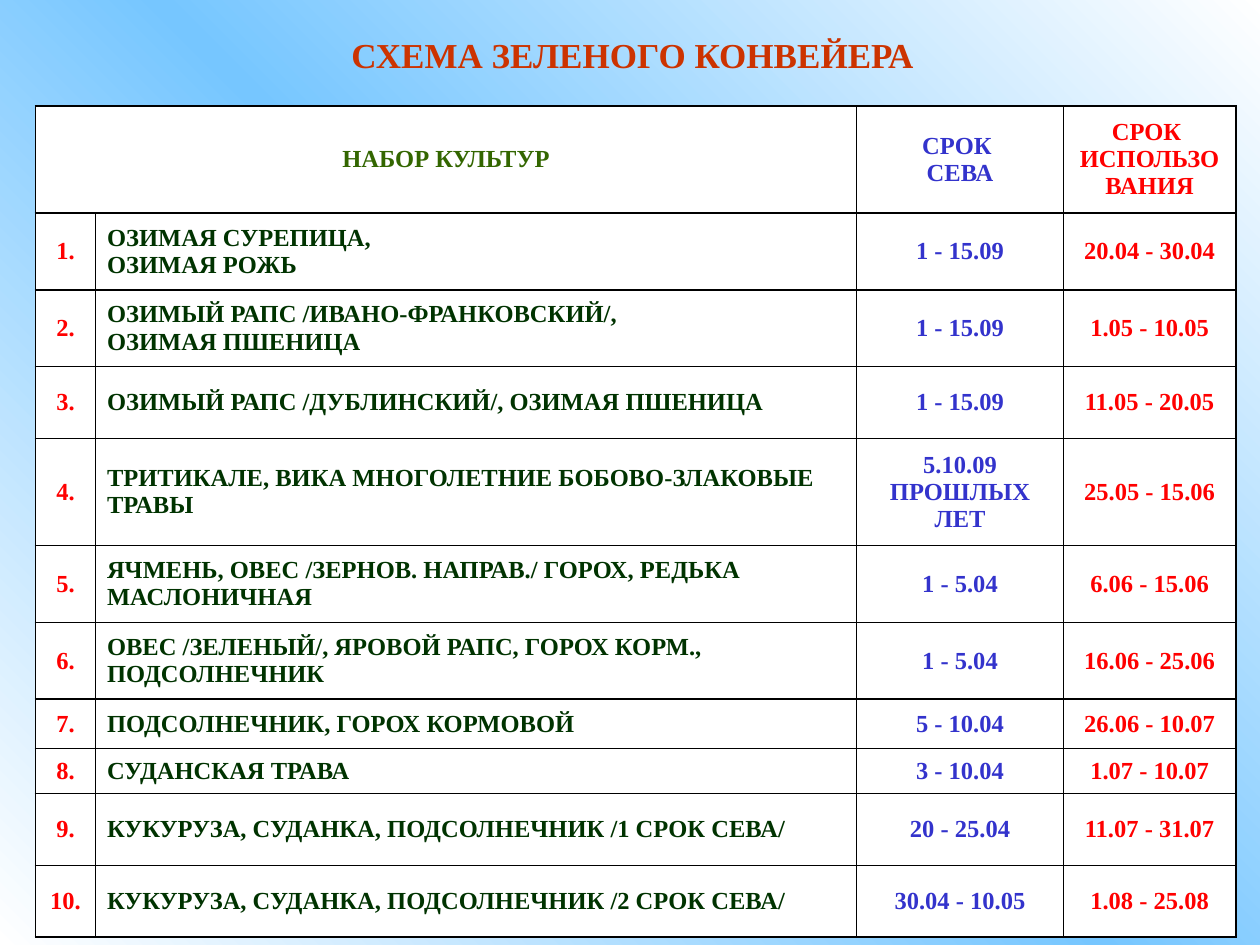
from copy import deepcopy
from typing import NamedTuple

from lxml import etree
from pptx import Presentation
from pptx.dml.color import RGBColor
from pptx.enum.text import MSO_ANCHOR, MSO_AUTO_SIZE, PP_ALIGN
from pptx.oxml.ns import qn
from pptx.util import Inches, Pt

CENTER, LEFT = PP_ALIGN.CENTER, PP_ALIGN.LEFT
MIDDLE = MSO_ANCHOR.MIDDLE

WHITE = RGBColor(0xFF, 0xFF, 0xFF)
SKY = RGBColor(0x76, 0xC6, 0xFF)
BLACK = RGBColor(0, 0, 0)
RUST = RGBColor(0xCC, 0x33, 0x00)
GREEN = RGBColor(0x33, 0x66, 0x00)
DARK_GREEN = RGBColor(0x00, 0x33, 0x00)
BLUE = RGBColor(0x33, 0x33, 0xCC)
RED = RGBColor(0xFF, 0, 0)

FONT = "Times New Roman"
TABLE_LEFT, TABLE_TOP = 0.28, 0.84
# Row heights by the number of text lines, with a few set apart
THREE, TWO, ROOMY, SNUG, TIGHT = 0.85, 0.61, 0.57, 0.39, 0.36


class Column(NamedTuple):
    width: float
    color: RGBColor
    align: PP_ALIGN


class Crop(NamedTuple):
    height: float
    name: str
    sowing: str
    use: str


COLUMNS = [
    Column(0.48, RED, CENTER),
    Column(6.04, DARK_GREEN, LEFT),
    Column(1.64, BLUE, CENTER),
    Column(1.37, RED, CENTER),
]
HEADER = Crop(THREE, "НАБОР КУЛЬТУР", "СРОК \nСЕВА", "СРОК \nИСПОЛЬЗОВАНИЯ")
CROPS = [
    Crop(TWO, "ОЗИМАЯ СУРЕПИЦА,\nОЗИМАЯ РОЖЬ", "1 - 15.09", "20.04 - 30.04"),
    Crop(TWO, "ОЗИМЫЙ РАПС /ИВАНО-ФРАНКОВСКИЙ/,\nОЗИМАЯ ПШЕНИЦА",
         "1 - 15.09", "1.05 - 10.05"),
    Crop(ROOMY, "ОЗИМЫЙ РАПС /ДУБЛИНСКИЙ/, ОЗИМАЯ ПШЕНИЦА",
         "1 - 15.09", "11.05 - 20.05"),
    Crop(THREE, "ТРИТИКАЛЕ, ВИКА МНОГОЛЕТНИЕ БОБОВО-ЗЛАКОВЫЕ ТРАВЫ",
         "5.10.09\nПРОШЛЫХ ЛЕТ", "25.05 - 15.06"),
    Crop(TWO, "ЯЧМЕНЬ, ОВЕС /ЗЕРНОВ. НАПРАВ./ ГОРОХ, РЕДЬКА МАСЛОНИЧНАЯ",
         "1 - 5.04", "6.06 - 15.06"),
    Crop(TWO, "ОВЕС /ЗЕЛЕНЫЙ/, ЯРОВОЙ РАПС, ГОРОХ КОРМ., ПОДСОЛНЕЧНИК",
         "1 - 5.04", "16.06 - 25.06"),
    Crop(SNUG, "ПОДСОЛНЕЧНИК, ГОРОХ КОРМОВОЙ", "5 - 10.04", "26.06 - 10.07"),
    Crop(TIGHT, "СУДАНСКАЯ ТРАВА", "3 - 10.04", "1.07 - 10.07"),
    Crop(ROOMY, "КУКУРУЗА, СУДАНКА, ПОДСОЛНЕЧНИК /1 СРОК СЕВА/",
         "20 - 25.04", "11.07 - 31.07"),
    Crop(ROOMY, "КУКУРУЗА, СУДАНКА, ПОДСОЛНЕЧНИК /2 СРОК СЕВА/",
         "30.04 - 10.05", "1.08 - 25.08"),
]


def write(tf, text: str, size: float, color: RGBColor, align: PP_ALIGN) -> None:
    """Fill a text frame, one paragraph per line of text."""
    tf.text = text
    for p in tf.paragraphs:
        p.alignment = align
        for r in p.runs:
            formats = {"name": FONT, "size": Pt(size), "bold": True}
            for key, value in formats.items():
                setattr(r.font, key, value)
            r.font.color.rgb = color


def add_borders(cell) -> None:
    """Draw a 1 pt black line on every side of a cell."""
    tc_pr = cell._tc.get_or_add_tcPr()
    for i, side in enumerate(("a:lnL", "a:lnR", "a:lnT", "a:lnB")):
        ln = etree.Element(qn(side), w=str(Pt(1)))
        fill = etree.SubElement(ln, qn("a:solidFill"))
        etree.SubElement(fill, qn("a:srgbClr"), val=str(BLACK))
        tc_pr.insert(i, ln)


def paint_background(s) -> None:
    """Blue diagonal band between two white corners."""
    fill = s.background.fill
    fill.gradient()
    fill.gradient_angle = 45
    stops = s.element.find(".//" + qn("a:gsLst"))
    stops.append(deepcopy(stops[0]))
    for stop, position, color in zip(fill.gradient_stops, (0, 0.5, 1),
                                     (WHITE, SKY, WHITE)):
        stop.position = position
        stop.color.rgb = color


def add_title(s, text: str) -> None:
    box = s.shapes.add_textbox(Inches(2.64), Inches(0.21), Inches(4.76), Inches(0.44))
    tf = box.text_frame
    tf.word_wrap = False
    tf.auto_size = MSO_AUTO_SIZE.SHAPE_TO_FIT_TEXT
    tf.vertical_anchor = MIDDLE
    write(tf, text, 20, RUST, CENTER)


def add_schedule(s) -> None:
    rows = [HEADER, *CROPS]
    width = sum(c.width for c in COLUMNS)
    height = sum(row.height for row in rows)
    table = s.shapes.add_table(len(rows), len(COLUMNS), Inches(TABLE_LEFT),
                               Inches(TABLE_TOP), Inches(width), Inches(height)).table
    table.first_row = table.horz_banding = False
    for column, c in zip(table.columns, COLUMNS):
        column.width = Inches(c.width)

    for i, row in enumerate(rows):
        table.rows[i].height = Inches(row.height)
        texts = (f"{i}." if i else "", row.name, row.sowing, row.use)
        for j, (text, c) in enumerate(zip(texts, COLUMNS)):
            cell = table.cell(i, j)
            cell.vertical_anchor = MIDDLE
            cell.margin_left = cell.margin_right = Inches(0.09)
            cell.margin_top = cell.margin_bottom = Inches(0.05)
            cell.fill.solid()
            cell.fill.fore_color.rgb = WHITE
            add_borders(cell)
            write(cell.text_frame, text, 14, c.color, c.align)

    # The first heading spans the number and crop columns
    heading = table.cell(0, 0)
    heading.merge(table.cell(0, 1))
    write(heading.text_frame, HEADER.name, 14, GREEN, CENTER)


def main() -> None:
    prs = Presentation()
    prs.slide_width, prs.slide_height = Inches(10), Inches(7.5)
    s = prs.slides.add_slide(prs.slide_layouts[6])
    paint_background(s)
    add_title(s, "СХЕМА ЗЕЛЕНОГО КОНВЕЙЕРА")
    add_schedule(s)
    prs.save("out.pptx")


if __name__ == "__main__":
    main()
